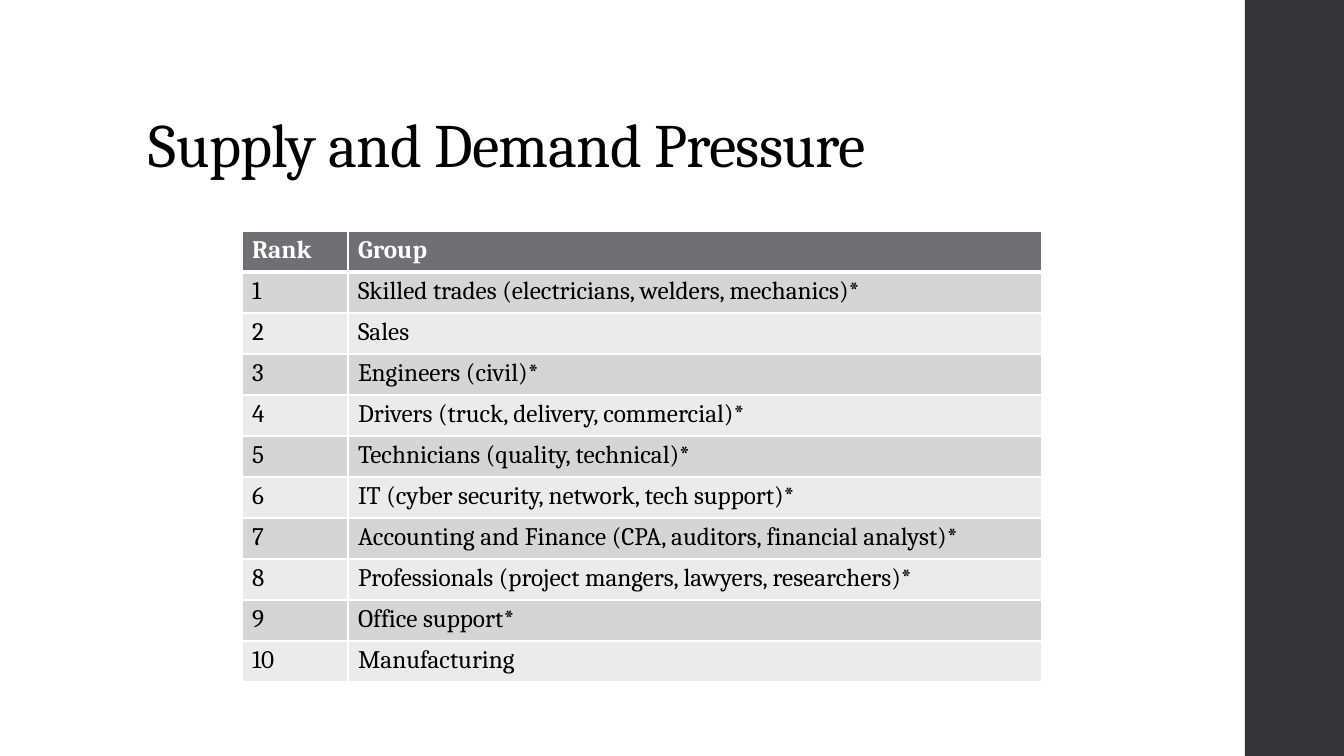
from lxml import etree
from pptx import Presentation
from pptx.dml.color import RGBColor
from pptx.enum.shapes import MSO_SHAPE
from pptx.enum.text import MSO_ANCHOR
from pptx.oxml.ns import qn
from pptx.util import Pt

RECTANGLE = MSO_SHAPE.RECTANGLE
BOTTOM = MSO_ANCHOR.BOTTOM
SLIDE_WIDTH, SLIDE_HEIGHT = 1344, 756
EMU_PER_PX = 12192000 / SLIDE_WIDTH

BLACK, WHITE = "000000", "FFFFFF"
SIDEBAR, HEADER = "353537", "6F6F74"
BANDS = ("D5D5D6", "EBEBEB")

GROUPS = (
    "Skilled trades (electricians, welders, mechanics)*",
    "Sales",
    "Engineers (civil)*",
    "Drivers (truck, delivery, commercial)*",
    "Technicians (quality, technical)*",
    "IT (cyber security, network, tech support)*",
    "Accounting and Finance (CPA, auditors, financial analyst)*",
    "Professionals (project mangers, lawyers, researchers)*",
    "Office support*",
    "Manufacturing",
)


def px(length):
    return round(length * EMU_PER_PX)


def rgb(color):
    return RGBColor.from_string(color)


class SlideBuilder:
    """Draws styled elements on the current slide."""

    font_name = "Cambria"

    def __init__(self, slide):
        self.slide = slide

    def add_text(self, frame, text, size, color, bold=False):
        paragraph = frame.paragraphs[0]
        run = paragraph.add_run()
        run.text = text
        font_format = {"name": self.font_name, "size": Pt(size), "bold": bold}
        for attribute, value in font_format.items():
            setattr(run.font, attribute, value)
        run.font.color.rgb = rgb(color)
        return paragraph, run

    def bar(self, left, top, width, height, color):
        bar = self.slide.shapes.add_shape(RECTANGLE, *map(px, (left, top, width, height)))
        bar.shadow.inherit = False
        bar.fill.solid()
        bar.fill.fore_color.rgb = rgb(color)
        bar.line.fill.background()

    def title(self, left, top, width, height, text):
        box = self.slide.shapes.add_textbox(*map(px, (left, top, width, height)))
        frame = box.text_frame
        frame_format = {"word_wrap": True, "vertical_anchor": BOTTOM}
        for attribute, value in frame_format.items():
            setattr(frame, attribute, value)
        paragraph, run = self.add_text(frame, text, 44, BLACK)
        paragraph.line_spacing = 0.9
        run.font._element.set("spc", "-50")

    def borders(self, cell, top, bottom):
        properties = cell._tc.get_or_add_tcPr()
        sides = {"lnL": 1, "lnR": 1, "lnT": top, "lnB": bottom}
        for position, (side, weight) in enumerate(sides.items()):
            border = etree.Element(qn(f"a:{side}"), w=str(Pt(weight)))
            fill = etree.SubElement(border, qn("a:solidFill"))
            etree.SubElement(fill, qn("a:srgbClr"), val=WHITE)
            properties.insert(position, border)

    def table(self, left, top, column_widths, row_height, rows):
        size = (sum(column_widths), row_height * len(rows))
        table = self.slide.shapes.add_table(
            len(rows), len(column_widths), *map(px, (left, top, *size))
        ).table
        for column, width in zip(table.columns, column_widths):
            column.width = px(width)
        for row_index, values in enumerate(rows):
            is_header = row_index == 0
            fill = HEADER if is_header else BANDS[(row_index - 1) % 2]
            for column_index, value in enumerate(values):
                cell = table.cell(row_index, column_index)
                cell.fill.solid()
                cell.fill.fore_color.rgb = rgb(fill)
                self.add_text(cell.text_frame, value, 18, WHITE if is_header else BLACK, is_header)
                self.borders(cell, 3 if row_index == 1 else 1, 3 if is_header else 1)


def main():
    presentation = Presentation()
    presentation.slide_width = px(SLIDE_WIDTH)
    presentation.slide_height = px(SLIDE_HEIGHT)
    builder = SlideBuilder(presentation.slides.add_slide(presentation.slide_layouts[6]))
    builder.bar(1245, 0, 99, SLIDE_HEIGHT, SIDEBAR)
    builder.title(139, 40, 1068, 146, "Supply and Demand Pressure")
    ranking = [(str(rank), group) for rank, group in enumerate(GROUPS, 1)]
    builder.table(242, 231, (106, 694), 41, [("Rank", "Group"), *ranking])
    presentation.save("out.pptx")


if __name__ == "__main__":
    main()
